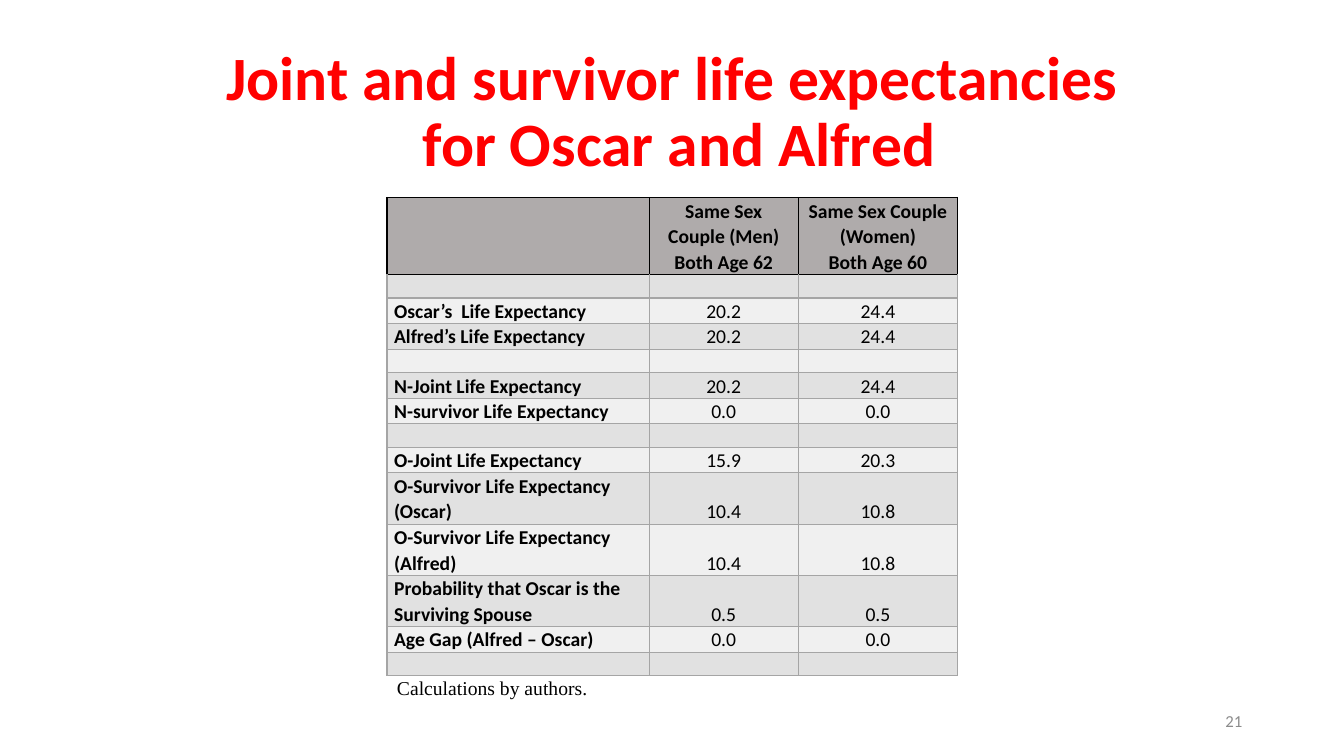
"""Build the slide on joint and survivor life expectancies."""
from dataclasses import dataclass

from lxml.etree import SubElement
from pptx import Presentation
from pptx.dml.color import RGBColor
from pptx.enum.text import MSO_ANCHOR, PP_ALIGN
from pptx.oxml.ns import qn
from pptx.slide import Slide
from pptx.table import _Cell
from pptx.text.text import _Paragraph
from pptx.util import Inches, Pt

SLIDE_WIDTH, SLIDE_HEIGHT = Inches(13.33), Inches(7.5)
GRID = 100

BLACK = RGBColor(0x00, 0x00, 0x00)
RED = RGBColor(0xFF, 0x00, 0x00)
PAGE_GRAY = RGBColor(0x8C, 0x8C, 0x8C)
HEADING_FILL = RGBColor(0xAF, 0xAB, 0xAB)
DARK_BAND = RGBColor(0xE1, 0xE1, 0xE1)
LIGHT_BAND = RGBColor(0xF0, 0xF0, 0xF0)
RULE_GRAY = RGBColor(0xA5, 0xA5, 0xA5)

TABLE_LEFT, TABLE_TOP = 28.8, 26.13
COLUMN_SPANS = (19.5, 11.1, 11.85)
LINE_SPAN, GAP_SPAN = 3.39, 3.11


@dataclass(frozen=True)
class Style:
    size: int
    color: RGBColor = BLACK
    bold: bool = False
    font: str = "Calibri"
    align: PP_ALIGN = PP_ALIGN.LEFT
    spacing: float = 1.0


@dataclass(frozen=True)
class Caption:
    text: str
    column: float
    row: float
    columns: float
    rows: float
    style: Style
    anchor: MSO_ANCHOR = MSO_ANCHOR.MIDDLE


@dataclass(frozen=True)
class Entry:
    label: str = ""
    men: str = ""
    women: str = ""
    lines: int = 1

    @property
    def span(self) -> float:
        return self.lines * LINE_SPAN if self.men else GAP_SPAN


CAPTIONS = (
    Caption("Joint and survivor life expectancies\v for Oscar and Alfred",
            6.9, 5.33, 86.26, 19.33,
            Style(44, RED, True, align=PP_ALIGN.CENTER, spacing=0.9)),
    Caption("21", 70.67, 92.67, 22.5, 5.33,
            Style(12, PAGE_GRAY, align=PP_ALIGN.RIGHT)),
    Caption("Calculations by authors.", TABLE_LEFT, 88.8, 21.15, 4.53,
            Style(14, font="Times New Roman"), MSO_ANCHOR.TOP),
)

ENTRIES = (
    Entry("", "Same Sex Couple (Men) Both Age 62",
          "Same Sex Couple (Women)\nBoth Age 60", 3),
    Entry(),
    Entry("Oscar’s  Life Expectancy", "20.2", "24.4"),
    Entry("Alfred’s Life Expectancy", "20.2", "24.4"),
    Entry(),
    Entry("N-Joint Life Expectancy", "20.2", "24.4"),
    Entry("N-survivor Life Expectancy", "0.0", "0.0"),
    Entry(),
    Entry("O-Joint Life Expectancy", "15.9", "20.3"),
    Entry("O-Survivor Life Expectancy (Oscar)", "10.4", "10.8", 2),
    Entry("O-Survivor Life Expectancy (Alfred)", "10.4", "10.8", 2),
    Entry("Probability that Oscar is the Surviving Spouse", "0.5", "0.5", 2),
    Entry("Age Gap (Alfred – Oscar)", "0.0", "0.0"),
    Entry(),
)


def across(columns: float) -> int:
    return round(SLIDE_WIDTH * columns / GRID)


def down(rows: float) -> int:
    return round(SLIDE_HEIGHT * rows / GRID)


def format_paragraph(paragraph: _Paragraph, style: Style) -> None:
    paragraph.alignment = style.align
    paragraph.line_spacing = style.spacing
    for run in paragraph.runs:
        run.font.size = Pt(style.size)
        run.font.name = style.font
        run.font.bold = style.bold
        run.font.color.rgb = style.color


def add_caption(slide: Slide, caption: Caption) -> None:
    box = slide.shapes.add_textbox(
        across(caption.column), down(caption.row),
        across(caption.columns), down(caption.rows))
    frame = box.text_frame
    frame.word_wrap = True
    frame.vertical_anchor = caption.anchor
    frame.text = caption.text
    for paragraph in frame.paragraphs:
        format_paragraph(paragraph, caption.style)


def add_borders(cell: _Cell, color: RGBColor, top_color: RGBColor) -> None:
    properties = cell._tc.get_or_add_tcPr()
    sides = {"a:lnL": color, "a:lnR": color, "a:lnT": top_color, "a:lnB": color}
    for side, side_color in sides.items():
        line = SubElement(properties, qn(side), w=str(Pt(1)))
        fill = SubElement(line, qn("a:solidFill"))
        SubElement(fill, qn("a:srgbClr"), val=str(side_color))


def fill_cell(cell: _Cell, text: str, row: int, column: int) -> None:
    heading = row == 0
    add_borders(cell, BLACK if heading else RULE_GRAY,
                BLACK if row <= 1 else RULE_GRAY)
    cell.fill.solid()
    band = DARK_BAND if row % 2 else LIGHT_BAND
    cell.fill.fore_color.rgb = HEADING_FILL if heading else band
    cell.margin_left = cell.margin_right = Inches(0.07)
    cell.margin_top = cell.margin_bottom = 0
    cell.vertical_anchor = MSO_ANCHOR.BOTTOM
    cell.text_frame.text = text
    style = Style(14, bold=heading or column == 0, spacing=1.07,
                  align=PP_ALIGN.CENTER if column else PP_ALIGN.LEFT)
    for paragraph in cell.text_frame.paragraphs:
        format_paragraph(paragraph, style)
        if not text:
            SubElement(paragraph._p, qn("a:endParaRPr"), sz="1200")


def add_expectancies(slide: Slide) -> None:
    table = slide.shapes.add_table(
        len(ENTRIES), len(COLUMN_SPANS), across(TABLE_LEFT), down(TABLE_TOP),
        across(sum(COLUMN_SPANS)),
        down(sum(entry.span for entry in ENTRIES))).table
    for column, span in zip(table.columns, COLUMN_SPANS):
        column.width = across(span)
    for row, entry in enumerate(ENTRIES):
        table.rows[row].height = down(entry.span)
        for column, text in enumerate((entry.label, entry.men, entry.women)):
            fill_cell(table.cell(row, column), text, row, column)


def main() -> None:
    deck = Presentation()
    deck.slide_width, deck.slide_height = SLIDE_WIDTH, SLIDE_HEIGHT
    slide = deck.slides.add_slide(deck.slide_layouts[6])
    add_expectancies(slide)
    for caption in CAPTIONS:
        add_caption(slide, caption)
    deck.save("out.pptx")


if __name__ == "__main__":
    main()
